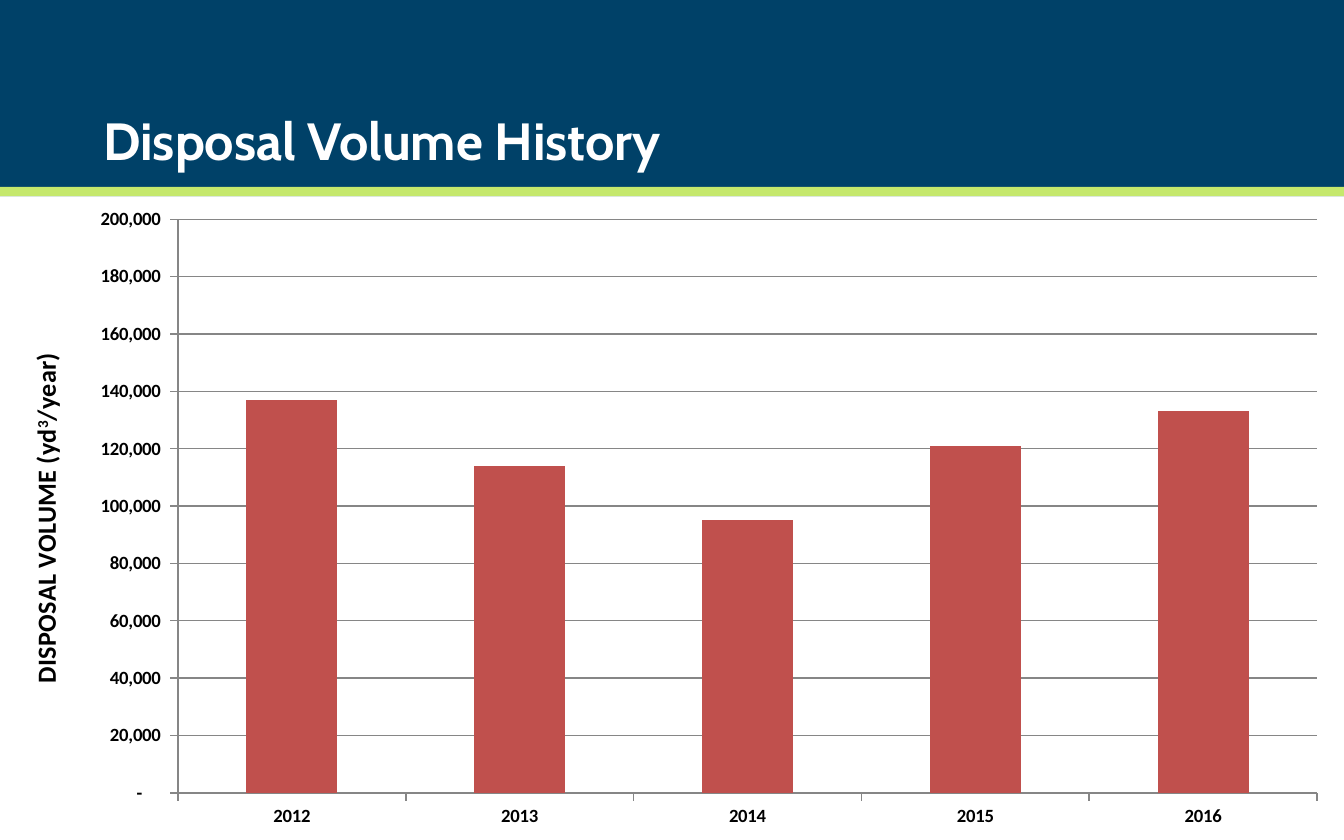
from dataclasses import dataclass

import pptx
import pptx.chart.data
import pptx.dml.color
import pptx.enum.chart
import pptx.enum.shapes
import pptx.enum.text
import pptx.oxml
import pptx.oxml.ns
import pptx.util

RGBColor = pptx.dml.color.RGBColor
NAVY = RGBColor(0x00, 0x41, 0x68)
LIME = RGBColor(0xC5, 0xE8, 0x6C)
BRICK = RGBColor(0xC0, 0x50, 0x4D)
GRAY = RGBColor(0x86, 0x86, 0x86)
BLACK = RGBColor(0x00, 0x00, 0x00)
WHITE = RGBColor(0xFF, 0xFF, 0xFF)

SLIDE_WIDTH = pptx.util.Inches(10)
SLIDE_HEIGHT = pptx.util.Inches(6.25)
HEADER_HEIGHT = pptx.util.Inches(1.46)
RULE_HEIGHT = pptx.util.Inches(0.07)

VOLUME_BY_YEAR = {
    "2012": 137000,
    "2013": 114000,
    "2014": 95000,
    "2015": 121000,
    "2016": 133000,
}
VOLUME_FORMAT = r'_(* #,##0_);_(* \(#,##0\);_(* "-"??_);_('


@dataclass(frozen=True)
class Band:
    top: int
    height: int
    color: RGBColor


HEADER_BANDS = (
    Band(0, HEADER_HEIGHT, NAVY),
    Band(HEADER_HEIGHT - RULE_HEIGHT, RULE_HEIGHT, LIME),
)


def style_font(font, face: str, size: float, color: RGBColor) -> None:
    font.name = face
    font.size = pptx.util.Pt(size)
    font.bold = True
    font.color.rgb = color


def draw_band(slide, band: Band) -> None:
    bar = slide.shapes.add_shape(
        pptx.enum.shapes.MSO_SHAPE.RECTANGLE, 0, band.top, SLIDE_WIDTH, band.height
    )
    bar.shadow.inherit = False
    bar.fill.solid()
    bar.fill.fore_color.rgb = band.color
    bar.line.fill.background()


def draw_heading(slide, text: str) -> None:
    heading = slide.shapes.add_textbox(
        *(pptx.util.Inches(length) for length in (0.67, 0.49, 6.83, 0.83))
    )
    frame = heading.text_frame
    frame.word_wrap = True
    frame.vertical_anchor = pptx.enum.text.MSO_ANCHOR.BOTTOM
    frame.text = text
    style_font(frame.paragraphs[0].runs[0].font, "Cabin", 28, WHITE)


def style_axis(axis) -> None:
    style_font(axis.tick_labels.font, "Calibri", 10, BLACK)
    axis.major_tick_mark = pptx.enum.chart.XL_TICK_MARK.OUTSIDE
    axis.minor_tick_mark = pptx.enum.chart.XL_TICK_MARK.NONE
    axis.format.line.color.rgb = GRAY
    axis.format.line.width = pptx.util.Pt(0.75)


def title_volume_axis(axis) -> None:
    paragraph = axis.axis_title.text_frame.paragraphs[0]
    for text in ("DISPOSAL VOLUME (yd", "3", "/year)"):
        run = paragraph.add_run()
        run.text = text
        style_font(run.font, "Calibri", 14, BLACK)
    exponent = paragraph.runs[1]
    exponent.font._element.set("baseline", "30000")


def place_plot(chart, x: float, y: float, w: float, h: float) -> None:
    """Fix the inner plot area, given as shares of the chart's size."""
    plot_area = chart._chartSpace.chart.plotArea
    for layout in plot_area.findall(pptx.oxml.ns.qn("c:layout")):
        plot_area.remove(layout)
    shares = "".join(
        f'<c:{tag} val="{share}"/>' for tag, share in zip("xywh", (x, y, w, h))
    )
    plot_area.insert(0, pptx.oxml.parse_xml(
        f'<c:layout {pptx.oxml.ns.nsdecls("c")}><c:manualLayout>'
        '<c:layoutTarget val="inner"/><c:xMode val="edge"/><c:yMode val="edge"/>'
        f"{shares}</c:manualLayout></c:layout>"
    ))


def draw_volume_chart(slide) -> None:
    volumes = pptx.chart.data.CategoryChartData(number_format="#,##0")
    volumes.categories = list(VOLUME_BY_YEAR)
    volumes.add_series("Series 1", list(VOLUME_BY_YEAR.values()))
    chart = slide.shapes.add_chart(
        pptx.enum.chart.XL_CHART_TYPE.COLUMN_CLUSTERED,
        0, HEADER_HEIGHT, SLIDE_WIDTH, SLIDE_HEIGHT - HEADER_HEIGHT, volumes,
    ).chart
    chart.has_title = False
    chart.has_legend = False
    style_font(chart.font, "Calibri", 10, BLACK)
    place_plot(chart, 0.1325, 0.036, 0.8475, 0.891)

    columns = chart.plots[0]
    columns.gap_width = 150
    columns.vary_by_categories = False
    fill = columns.series[0].format.fill
    fill.solid()
    fill.fore_color.rgb = BRICK

    style_axis(chart.category_axis)
    volume_axis = chart.value_axis
    style_axis(volume_axis)
    volume_axis.minimum_scale = 0
    volume_axis.maximum_scale = 200000
    volume_axis.major_unit = 20000
    volume_axis.tick_labels.number_format = VOLUME_FORMAT
    volume_axis.tick_labels.number_format_is_linked = False
    volume_axis.has_major_gridlines = True
    gridline = volume_axis.major_gridlines.format.line
    gridline.color.rgb = GRAY
    gridline.width = pptx.util.Pt(0.75)
    title_volume_axis(volume_axis)


def main() -> None:
    presentation = pptx.Presentation()
    presentation.slide_width = SLIDE_WIDTH
    presentation.slide_height = SLIDE_HEIGHT
    slide = presentation.slides.add_slide(presentation.slide_layouts[6])
    for band in HEADER_BANDS:
        draw_band(slide, band)
    draw_heading(slide, "Disposal Volume History")
    draw_volume_chart(slide)
    presentation.save("out.pptx")


if __name__ == "__main__":
    main()
